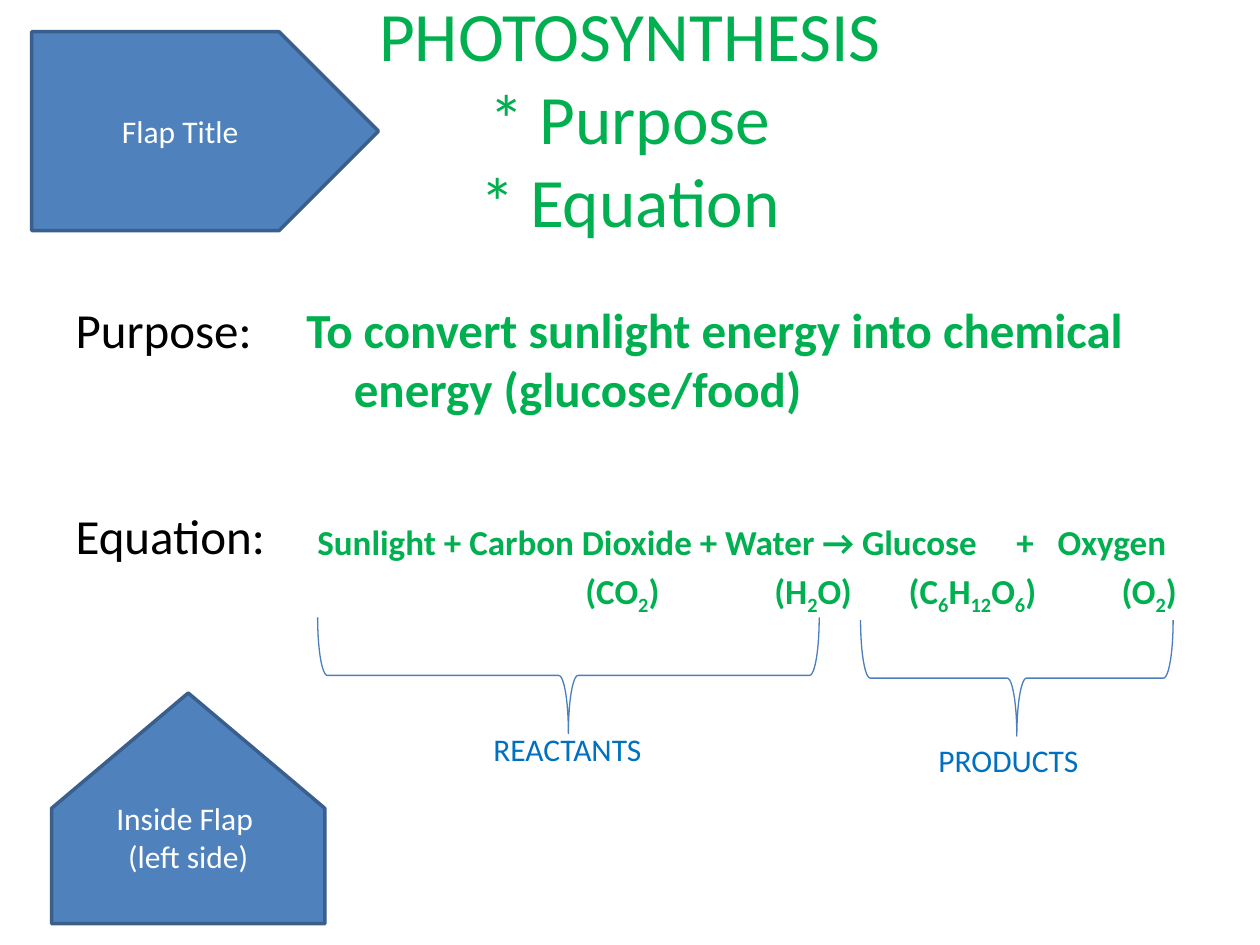
from dataclasses import dataclass
from itertools import groupby

from lxml.etree import SubElement
from pptx import Presentation
from pptx.dml.color import RGBColor as RGB
from pptx.enum.shapes import MSO_SHAPE as Shape
from pptx.enum.text import MSO_ANCHOR as Anchor, PP_ALIGN as Align
from pptx.oxml.ns import qn
from pptx.util import Cm, Pt


@dataclass(frozen=True)
class Theme:
    font: str = "Calibri"
    green: RGB = RGB(0x00, 0xB0, 0x50)
    black: RGB = RGB(0, 0, 0)
    white: RGB = RGB(255, 255, 255)
    blue: RGB = RGB(0x00, 0x70, 0xC0)
    fill: RGB = RGB(0x4F, 0x81, 0xBD)
    edge: RGB = RGB(0x3A, 0x5F, 0x8C)
    brace: RGB = RGB(0x4B, 0x7E, 0xBC)
    title: Pt = Pt(39.6)
    body: Pt = Pt(28)
    terms: Pt = Pt(20)
    label: Pt = Pt(18)


theme = Theme()


def write(par, text, size, color, bold=False):
    run = par.add_run()
    run.text = text
    font = run.font
    font.name, font.size, font.bold = theme.font, size, bold
    font.color.rgb = color
    return run


def place(item, left, top, width, height):
    item.left, item.top = Cm(left), Cm(top)
    item.width, item.height = Cm(width), Cm(height)


deck = Presentation()
deck.slide_width, deck.slide_height = Cm(25.4), Cm(19.05)
slide = deck.slides.add_slide(deck.slide_layouts[3])
shapes = slide.shapes
title, left, right = slide.placeholders

# Title
place(title, 1.27, 0.76, 22.86, 3.18)
title.text_frame.vertical_anchor = Anchor.MIDDLE
par = title.text_frame.paragraphs[0]
par.alignment = Align.CENTER
for i, line in enumerate(["PHOTOSYNTHESIS", "* Purpose", "* Equation"]):
    if i:
        par.add_line_break()
    write(par, line, theme.title, theme.green)

# Headings on the left, purpose on the right
place(left, 1.27, 5.92, 11.23, 11.1)
place(right, 5.92, 5.92, 18.21, 3.38)
first = left.text_frame.paragraphs[0]
second = left.text_frame.add_paragraph()
second.space_before = Pt(84)
goal = right.text_frame.paragraphs[0]
for par, text, color, hang in [
    (first, "Purpose:", theme.black, 0),
    (second, "Equation:", theme.black, 0),
    (goal, "To convert sunlight energy into chemical energy (glucose/food)",
     theme.green, 0.96),
]:
    write(par, text, theme.body, color, bold=color == theme.green)
    props = par._p.get_or_add_pPr()
    props.set("marL", str(Cm(hang)))
    props.set("indent", str(-Cm(hang)))
    SubElement(props, qn("a:buNone"))

# Flap arrows
for lines, box, turn in [
    (["Flap Title"], (0.64, 0.64, 6.99, 4.01), 0),
    (["Inside Flap ", "(left side)"], (1.47, 13.54, 4.65, 5.51), 270),
]:
    flap = shapes.add_shape(Shape.PENTAGON, *map(Cm, box))
    flap.shadow.inherit = False
    flap.rotation = turn
    flap.fill.solid()
    flap.fill.fore_color.rgb = theme.fill
    flap.line.color.rgb = theme.edge
    flap.line.width = Pt(2)
    frame = flap.text_frame
    frame.vertical_anchor = Anchor.MIDDLE
    if turn:
        frame._txBody.bodyPr.set("vert", "vert")
    for i, line in enumerate(lines):
        par = frame.add_paragraph() if i else frame.paragraphs[0]
        par.alignment = Align.CENTER
        write(par, line, theme.label, theme.white)

# Equation: words above, formulas below, aligned by tab stops
frame = shapes.add_textbox(Cm(6.15), Cm(10.36), Cm(18.21), Cm(3.38)).text_frame
frame.word_wrap = True
for i, (text, stops) in enumerate([
    ("Sunlight + Carbon Dioxide + Water → Glucose\t+\tOxygen", [14.09, 14.92]),
    ("\t(CO2)\t(H2O)\t(C6H12O6)\t(O2)", [5.4, 9.21, 11.92, 16.21]),
]):
    par = frame.add_paragraph() if i else frame.paragraphs[0]
    par.space_before = Pt(4)
    tabs = SubElement(par._p.get_or_add_pPr(), qn("a:tabLst"))
    for stop in stops:
        SubElement(tabs, qn("a:tab"), pos=str(Cm(stop)), algn="l")
    for digit, chars in groupby(text, str.isdigit):
        run = write(par, "".join(chars), theme.terms, theme.green, bold=True)
        if digit:
            run.font._element.set("baseline", "-25000")

# Braces with their labels
for text, box, spot in [
    ("REACTANTS", (10.29, 8.56, 2.34, 10.11), (8.05, 14.6)),
    ("PRODUCTS", (19.33, 10.52, 2.34, 6.3), (16.94, 14.81)),
]:
    brace = shapes.add_shape(Shape.LEFT_BRACE, *map(Cm, box))
    brace.shadow.inherit = False
    brace.rotation = 270
    brace.fill.background()
    brace.line.color.rgb = theme.brace
    brace.line.width = Pt(0.75)
    frame = shapes.add_textbox(*map(Cm, spot), Cm(6.78), Cm(1.02)).text_frame
    frame.word_wrap = True
    par = frame.paragraphs[0]
    par.alignment = Align.CENTER
    write(par, text, theme.label, theme.blue)

deck.save("out.pptx")
